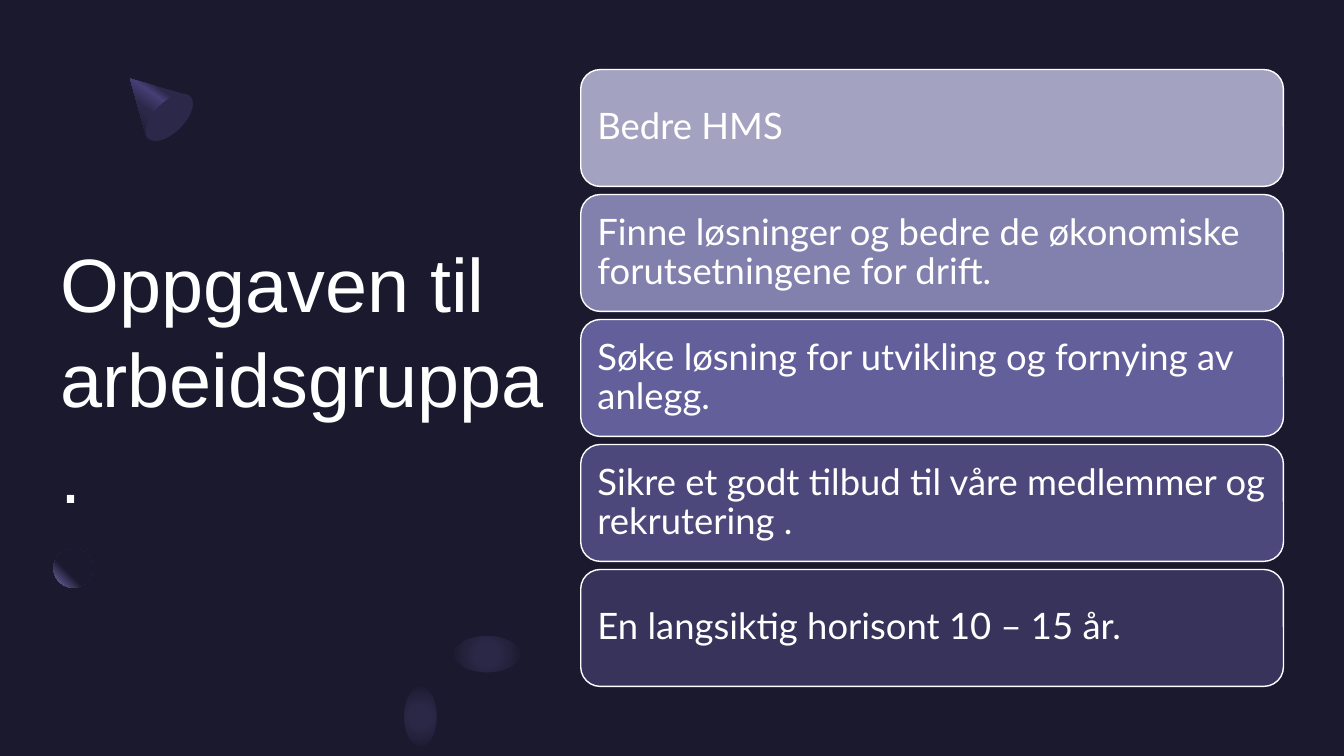
from dataclasses import dataclass
from typing import Any

from pptx import Presentation
from pptx.dml.color import RGBColor
from pptx.enum.shapes import MSO_SHAPE
from pptx.enum.text import MSO_ANCHOR, PP_ALIGN
from pptx.oxml import parse_xml
from pptx.oxml.ns import nsdecls, qn
from pptx.util import Inches, Pt

COLORS = {
    "night": "1B192E",
    "dusk": "2C284A",
    "violet": "454075",
    "lilac": "7771B2",
    "glow": "2B2847",
    "white": "FFFFFF",
}

CARD_LEFT, CARD_TOP, CARD_WIDTH, CARD_HEIGHT, CARD_PITCH = 5.76, 0.69, 6.97, 1.16, 1.24
CONE_OUTLINE = [(1.29, 0.78), (1.85, 0.94), (1.88, 0.96), (1.89, 1.08),
                (1.78, 1.27), (1.62, 1.37), (1.47, 1.38), (1.45, 1.35)]


@dataclass(frozen=True)
class Task:
    text: str
    fill: str


@dataclass(frozen=True)
class Gradient:
    stops: tuple[tuple[int, str], ...]
    direction: str


@dataclass(frozen=True)
class Ornament:
    left: float
    top: float
    width: float
    height: float
    fill: str | Gradient
    rotation: float = 0


TASKS = [
    Task("Bedre HMS", "A3A3C1"),
    Task("Finne løsninger og bedre de økonomiske forutsetningene for drift.", "8281AE"),
    Task("Søke løsning for utvikling og fornying av anlegg.", "625F9A"),
    Task("Sikre et godt tilbud til våre medlemmer og rekrutering .", "4C487B"),
    Task("En langsiktig horisont 10 – 15 år.", "37335B"),
]

CONE_SHADING = Gradient(
    ((0, "dusk"), (30, "dusk"), (40, "violet"), (60, "dusk"), (100, "night")),
    '<a:lin ang="7500000" scaled="0"/>',
)
BALL_SHADING = Gradient(
    ((0, "night"), (60, "night"), (100, "lilac")),
    '<a:path path="circle"><a:fillToRect l="100000" b="100000"/></a:path>',
)
SOFT_GLOW = Gradient(
    ((0, "glow"), (30, "glow"), (100, "night")),
    '<a:path path="circle"><a:fillToRect l="50000" t="50000" r="50000" b="50000"/></a:path>',
)

ORNAMENTS = [
    Ornament(1.53, 0.87, 0.3, 0.59, COLORS["dusk"], 45),
    Ornament(0.53, 5.44, 0.39, 0.39, BALL_SHADING),
    Ornament(4.5, 6.31, 0.66, 0.36, SOFT_GLOW),
    Ornament(4.01, 6.81, 0.32, 0.6, SOFT_GLOW),
]

TITLE_FRAME = {"word_wrap": True, "vertical_anchor": MSO_ANCHOR.MIDDLE} | dict.fromkeys(
    ("margin_left", "margin_top", "margin_right", "margin_bottom"), 0)
CARD_FRAME = TITLE_FRAME | dict.fromkeys(
    ("margin_left", "margin_top", "margin_right", "margin_bottom"), Inches(0.11))
TITLE_FONT = {"name": "Arial", "size": Pt(54)}
CARD_FONT = {"name": "Lato", "size": Pt(26)}


def set_attributes(target: Any, values: dict[str, Any]) -> None:
    for attribute, value in values.items():
        setattr(target, attribute, value)


def paint(shape: Any, fill: str | Gradient) -> None:
    """Fill with a hex colour or a gradient, with neither outline nor shadow."""
    shape.shadow.inherit = False
    shape.line.fill.background()
    if isinstance(fill, str):
        shape.fill.solid()
        shape.fill.fore_color.rgb = RGBColor.from_string(fill)
        return
    shape.fill.background()
    stops = "".join(
        f'<a:gs pos="{percent * 1000}"><a:srgbClr val="{COLORS[color]}"/></a:gs>'
        for percent, color in fill.stops
    )
    gradient = parse_xml(
        f'<a:gradFill {nsdecls("a")} rotWithShape="1"><a:gsLst>{stops}</a:gsLst>'
        f"{fill.direction}</a:gradFill>"
    )
    properties = shape.element.spPr
    properties.replace(properties.find(qn("a:noFill")), gradient)


def write(shape: Any, text: str, frame: dict[str, Any], font: dict[str, Any],
          line_spacing: float) -> None:
    set_attributes(shape.text_frame, frame)
    paragraph = shape.text_frame.paragraphs[0]
    set_attributes(paragraph, {"alignment": PP_ALIGN.LEFT, "line_spacing": line_spacing})
    run = paragraph.add_run()
    run.text = text
    set_attributes(run.font, font)
    run.font.color.rgb = RGBColor.from_string(COLORS["white"])


def add_cone_side(slide: Any) -> None:
    points = [(Inches(x), Inches(y)) for x, y in CONE_OUTLINE]
    builder = slide.shapes.build_freeform(*points[0])
    builder.add_line_segments(points[1:], close=True)
    paint(builder.convert_to_shape(), CONE_SHADING)


def add_ornament(slide: Any, ornament: Ornament) -> None:
    ellipse = slide.shapes.add_shape(
        MSO_SHAPE.OVAL, Inches(ornament.left), Inches(ornament.top),
        Inches(ornament.width), Inches(ornament.height))
    ellipse.rotation = ornament.rotation
    paint(ellipse, ornament.fill)


def add_task_card(slide: Any, task: Task, row: int) -> None:
    card = slide.shapes.add_shape(
        MSO_SHAPE.ROUNDED_RECTANGLE, Inches(CARD_LEFT),
        Inches(CARD_TOP + row * CARD_PITCH), Inches(CARD_WIDTH), Inches(CARD_HEIGHT))
    paint(card, task.fill)
    card.line.color.rgb = RGBColor.from_string(COLORS["white"])
    card.line.width = Pt(1)
    write(card, task.text, CARD_FRAME, CARD_FONT, 0.9)


def main() -> None:
    presentation = Presentation()
    set_attributes(presentation, {"slide_width": Inches(13.33), "slide_height": Inches(7.5)})
    slide = presentation.slides.add_slide(presentation.slide_layouts[6])
    slide.background.fill.solid()
    slide.background.fill.fore_color.rgb = RGBColor.from_string(COLORS["night"])

    add_cone_side(slide)
    for ornament in ORNAMENTS:
        add_ornament(slide, ornament)

    title = slide.shapes.add_textbox(Inches(0.6), Inches(1.66), Inches(4.96), Inches(4.13))
    write(title, "Oppgaven til arbeidsgruppa.", TITLE_FRAME, TITLE_FONT, 1.05)

    for row, task in enumerate(TASKS):
        add_task_card(slide, task, row)

    presentation.save("out.pptx")


if __name__ == "__main__":
    main()
